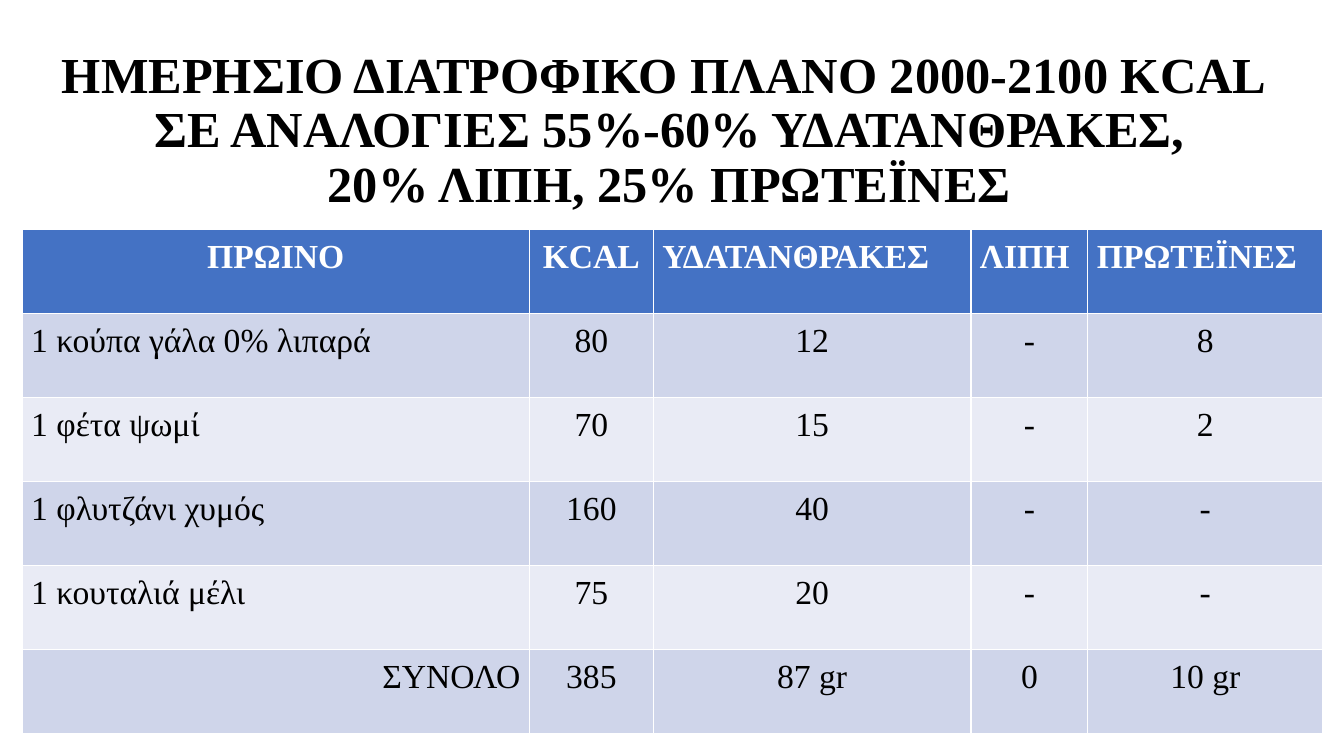
from pptx import Presentation
from pptx.dml.color import RGBColor
from pptx.enum.text import MSO_ANCHOR, MSO_AUTO_SIZE, PP_ALIGN
from pptx.util import Inches, Pt

TITLE = [
    "ΗΜΕΡΗΣΙΟ ΔΙΑΤΡΟΦΙΚΟ ΠΛΑΝΟ 2000-2100 KCAL ",
    "ΣΕ ΑΝΑΛΟΓΙΕΣ 55%-60% ΥΔΑΤΑΝΘΡΑΚΕΣ,\n20% ΛΙΠΗ, 25% ΠΡΩΤΕΪΝΕΣ",
]
MEALS = [
    ("ΠΡΩΙΝΟ", "KCAL", "ΥΔΑΤΑΝΘΡΑΚΕΣ", "ΛΙΠΗ", "ΠΡΩΤΕΪΝΕΣ"),
    ("1 κούπα γάλα 0% λιπαρά", "80", "12", "-", "8"),
    ("1 φέτα ψωμί", "70", "15", "-", "2"),
    ("1 φλυτζάνι χυμός", "160", "40", "-", "-"),
    ("1 κουταλιά μέλι", "75", "20", "-", "-"),
    ("ΣΥΝΟΛΟ", "385", "87 gr", "0", "10 gr"),
]
WIDTHS = [5.03, 1.23, 3.15, 1.16, 2.33]
FONT = "Times New Roman"
BLACK = RGBColor(0x00, 0x00, 0x00)
WHITE = RGBColor(0xFF, 0xFF, 0xFF)
BLUE = RGBColor(0x44, 0x72, 0xC4)
BANDS = [RGBColor(0xE9, 0xEB, 0xF5), RGBColor(0xCF, 0xD5, 0xEA)]
LAST = len(MEALS) - 1


def style(para, size, color, bold, align):
    para.alignment = align
    font = para.font
    font.name, font.size, font.bold = FONT, Pt(size), bold
    font.color.rgb = color


def align_of(row, col):
    if row == 0:
        return PP_ALIGN.CENTER if col < 2 else PP_ALIGN.LEFT
    if col > 0:
        return PP_ALIGN.CENTER
    return PP_ALIGN.RIGHT if row == LAST else PP_ALIGN.LEFT


def add_title(slide):
    title = slide.shapes.title
    title.left, title.top = Inches(0.1), Inches(0.4)
    title.width, title.height = Inches(13.08), Inches(1.81)
    frame = title.text_frame
    frame.word_wrap = True
    frame.auto_size = MSO_AUTO_SIZE.NONE
    frame.vertical_anchor = MSO_ANCHOR.MIDDLE
    for i, line in enumerate(TITLE):
        para = frame.add_paragraph() if i else frame.paragraphs[0]
        para.text = line
        para.line_spacing = 0.9
        para.space_before = Pt(0)
        style(para, 36, BLACK, True, PP_ALIGN.CENTER)


def add_meals(slide):
    table = slide.shapes.add_table(
        len(MEALS), len(WIDTHS), Inches(0.22), Inches(2.28),
        Inches(sum(WIDTHS)), Inches(5)).table
    for col, width in zip(table.columns, WIDTHS):
        col.width = Inches(width)
    for r, meal in enumerate(MEALS):
        head = r == 0
        for c, text in enumerate(meal):
            cell = table.cell(r, c)
            cell.margin_left = cell.margin_right = Inches(0.09)
            cell.margin_top = cell.margin_bottom = Inches(0.09)
            cell.fill.solid()
            cell.fill.fore_color.rgb = BLUE if head else BANDS[r % 2]
            para = cell.text_frame.paragraphs[0]
            para.text = text
            style(para, 24, WHITE if head else BLACK, head, align_of(r, c))


def main():
    deck = Presentation()
    deck.slide_width, deck.slide_height = Inches(13.33), Inches(7.5)
    slide = deck.slides.add_slide(deck.slide_layouts[5])
    add_title(slide)
    add_meals(slide)
    deck.save("out.pptx")


if __name__ == "__main__":
    main()
